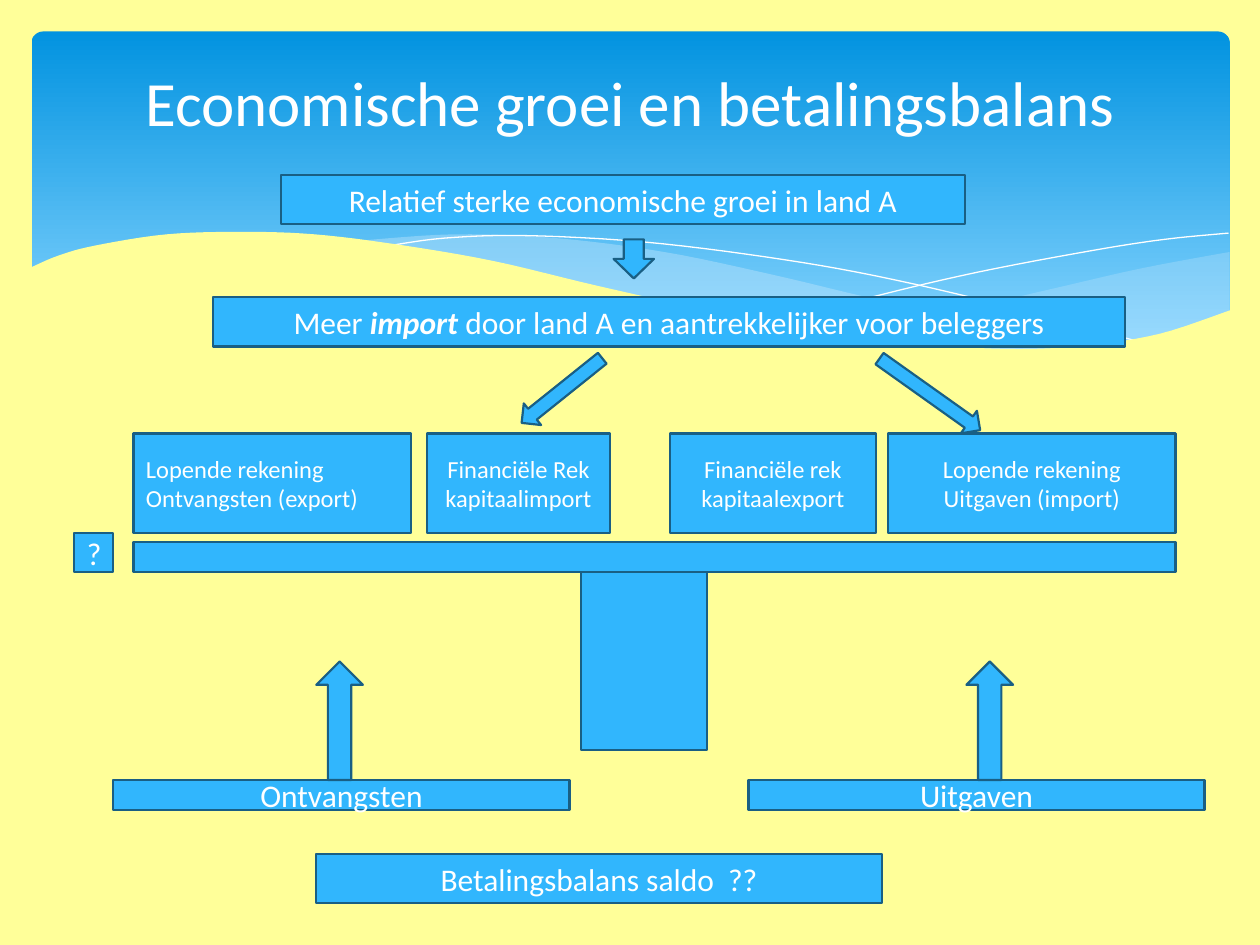
from lxml import etree
from pptx import Presentation
from pptx import util as u
from pptx.dml.color import RGBColor
from pptx.enum import shapes, text
from pptx.oxml.ns import qn

THEME = {
    "paper": RGBColor.from_string("FFFF99"),
    "sky_top": RGBColor.from_string("0293E0"),
    "sky_bottom": RGBColor.from_string("83D3FE"),
    "mist": RGBColor.from_string("C6E7FC"),
    "box": RGBColor.from_string("31B6FD"),
    "edge": RGBColor.from_string("195F84"),
    "white": RGBColor.from_string("FFFFFF"),
    "font": "Calibri", "title": 36, "body": 18, "small": 14, "border": 1.25,
}
RECT, ARROW = shapes.MSO_SHAPE.RECTANGLE, shapes.MSO_SHAPE.DOWN_ARROW
LEFT, CENTER = text.PP_ALIGN.LEFT, text.PP_ALIGN.CENTER

prs = Presentation()
prs.slide_width, prs.slide_height = u.Inches(10), u.Inches(7.5)
slide = prs.slides.add_slide(prs.slide_layouts[5])
slide.background.fill.solid()
slide.background.fill.fore_color.rgb = THEME["paper"]


def smooth_curve(knots, steps=6):
    """Catmull-Rom curve through the knots."""
    padded = [knots[0], *knots, knots[-1]]
    curve = [knots[0]]
    for a, b, c, d in zip(padded, padded[1:], padded[2:], padded[3:]):
        for t in (step / steps for step in range(1, steps + 1)):
            curve.append(tuple(
                (2 * q + (r - p) * t + (2 * p - 5 * q + 4 * r - s) * t**2
                 + (3 * q - p - 3 * r + s) * t**3) / 2
                for p, q, r, s in zip(a, b, c, d)))
    return curve


def add_block(kind, left, top, width, height, lines=(), size=THEME["body"], align=CENTER):
    block = slide.shapes.add_shape(kind, *map(u.Inches, (left, top, width, height)))
    block.shadow.inherit = False
    block.fill.solid()
    block.fill.fore_color.rgb = THEME["box"]
    block.line.color.rgb = THEME["edge"]
    block.line.width = u.Pt(THEME["border"])
    frame = block.text_frame
    frame.vertical_anchor = text.MSO_ANCHOR.MIDDLE
    frame.text = "\n".join(lines)
    for paragraph in frame.paragraphs:
        paragraph.alignment = align
        paragraph.font.size = u.Pt(size)
        paragraph.font.name = THEME["font"]
        paragraph.font.color.rgb = THEME["white"]
    return block


# Blue banner
banner = slide.shapes.add_shape(shapes.MSO_SHAPE.ROUNDED_RECTANGLE,
                                *map(u.Inches, (0.25, 0.25, 9.51, 2.7)))
banner.adjustments[0] = 0.034
banner.shadow.inherit = False
banner.line.fill.background()
banner.fill.gradient()
banner.fill.gradient_angle = 270
for stop, position, color in zip(banner.fill.gradient_stops, (0, 0.9), ("sky_top", "sky_bottom")):
    stop.position = position
    stop.color.rgb = THEME[color]

# Waves: outline, fill colour (None for a thin line), opacity in percent
right_mist = (
    smooth_curve([(9.76, 2), (9.06, 2.13), (8.32, 2.3), (7.53, 2.48), (6.61, 2.65)])
    + smooth_curve([(6.61, 2.65), (7.18, 2.73), (8.03, 2.78), (8.63, 2.75),
                    (9.21, 2.65), (9.76, 2.47)]))
left_mist = (
    smooth_curve([(8.93, 2.73), (8.07, 2.6), (7.06, 2.4), (6.13, 2.18), (5.27, 2),
                  (4.41, 1.89), (3.61, 1.86), (2.86, 1.91)])
    + smooth_curve([(2.86, 1.91), (3.62, 2.03), (4.49, 2.22), (5.66, 2.48), (6.5, 2.64),
                    (7.36, 2.75), (8.18, 2.79), (8.93, 2.73)]))
falling_line = smooth_curve([(3.09, 1.95), (3.53, 1.89), (4.16, 1.87), (5.1, 1.92),
                             (6.08, 2.04), (6.95, 2.19), (7.95, 2.42), (9.07, 2.72)])
rising_line = smooth_curve([(6.13, 2.57), (6.95, 2.35), (7.76, 2.16), (8.66, 1.99),
                            (9.24, 1.9), (9.75, 1.85)])
paper_wave = smooth_curve([
    (9.77, 2.46), (9.2, 2.65), (8.63, 2.74), (8.09, 2.77), (7.44, 2.74), (6.68, 2.65),
    (5.79, 2.5), (4.75, 2.27), (3.91, 2.07), (3.15, 1.94), (2.5, 1.86), (1.93, 1.84),
    (1.32, 1.86), (0.75, 1.95), (0.46, 2.03), (0.23, 2.13)]) + [(0.23, 3.29), (9.77, 3.29)]

for outline, color, opacity in [
    (right_mist, "mist", 29),
    (left_mist, "mist", 40),
    (falling_line, None, 100),
    (rising_line, None, 100),
    (paper_wave, "paper", 100),
]:
    points = [(u.Inches(x), u.Inches(y)) for x, y in outline]
    builder = slide.shapes.build_freeform(*points[0])
    builder.add_line_segments(points[1:], close=color is not None)
    wave = builder.convert_to_shape()
    wave.shadow.inherit = False
    if color is None:
        wave.fill.background()
        wave.line.color.rgb = THEME["white"]
        wave.line.width = u.Pt(0)
        continue
    wave.line.fill.background()
    wave.fill.solid()
    wave.fill.fore_color.rgb = THEME[color]
    if opacity < 100:
        rgb = wave.fill._xPr.find(".//" + qn("a:srgbClr"))
        etree.SubElement(rgb, qn("a:alpha")).set("val", str(opacity * 1000))

# Title, brought in front of the banner
title = slide.shapes.title
slide.shapes._spTree.append(title._element)
title.left, title.top, title.width, title.height = map(u.Inches, (0.5, 0.37, 9, 0.86))
title.text_frame.text = "Economische groei en betalingsbalans"
title.text_frame.vertical_anchor = text.MSO_ANCHOR.MIDDLE
heading = title.text_frame.paragraphs[0]
heading.alignment = CENTER
heading_font = heading.runs[0].font
heading_font.size, heading_font.name = u.Pt(THEME["title"]), THEME["font"]
heading_font.color.rgb = THEME["white"]

# Balance: beam and post
add_block(RECT, 1.06, 4.3, 8.27, 0.24)
add_block(RECT, 4.61, 4.54, 1, 1.41)

# Accounts on the beam
for left, width, align, lines in [
    (1.06, 2.2, LEFT, ("Lopende rekening", "Ontvangsten (export)")),
    (7.05, 2.28, CENTER, ("Lopende rekening", "Uitgaven (import)")),
    (3.39, 1.45, CENTER, ("Financiële Rek", "kapitaalimport")),
    (5.32, 1.63, CENTER, ("Financiële rek", "kapitaalexport")),
]:
    add_block(RECT, left, 3.44, width, 0.79, lines, THEME["small"], align)

# Cause, effect, sides of the balance and result
add_block(RECT, 2.23, 1.39, 5.43, 0.39, ["Relatief sterke economische groei in land A"])
effect = add_block(RECT, 1.69, 2.36, 7.24, 0.39, ["Meer "]).text_frame.paragraphs[0]
stressed = effect.add_run()
stressed.text = "import"
stressed.font.bold = stressed.font.italic = True
effect.add_run().text = " door land A en aantrekkelijker voor beleggers"
add_block(RECT, 0.9, 6.19, 3.62, 0.24, ["Ontvangsten"])
add_block(RECT, 5.94, 6.19, 3.62, 0.24, ["Uitgaven"])
add_block(RECT, 0.59, 4.23, 0.31, 0.31, ["?"])
add_block(RECT, 2.51, 6.78, 4.49, 0.39, ["Betalingsbalans saldo  ??"])

# Arrows: left, top, width, height, rotation
for *place, rotation in [
    (7.27, 2.64, 0.22, 0.98, 305.4),
    (4.87, 1.9, 0.32, 0.31, 0),
    (4.35, 2.69, 0.22, 0.82, 51.3),
    (2.51, 5.25, 0.37, 0.94, 180),
    (7.67, 5.25, 0.37, 0.94, 180),
]:
    add_block(ARROW, *place).rotation = rotation

prs.save("out.pptx")
